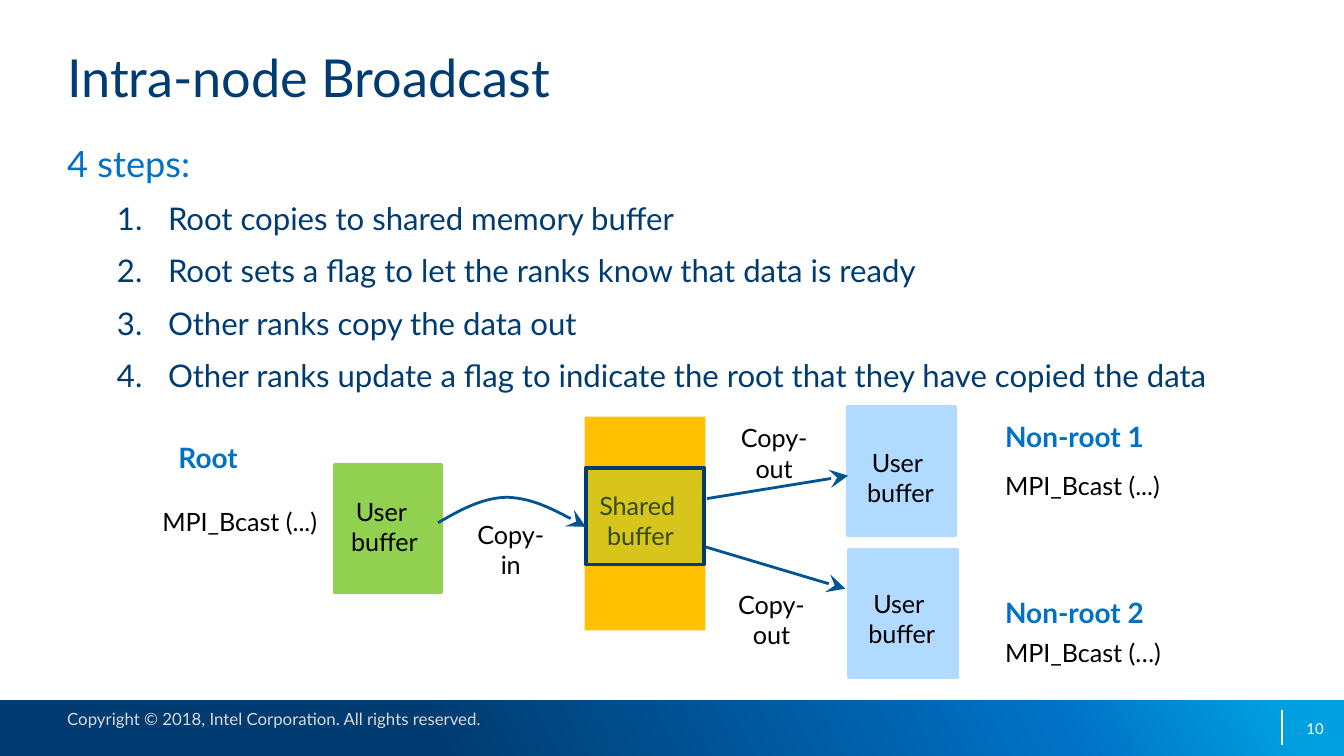
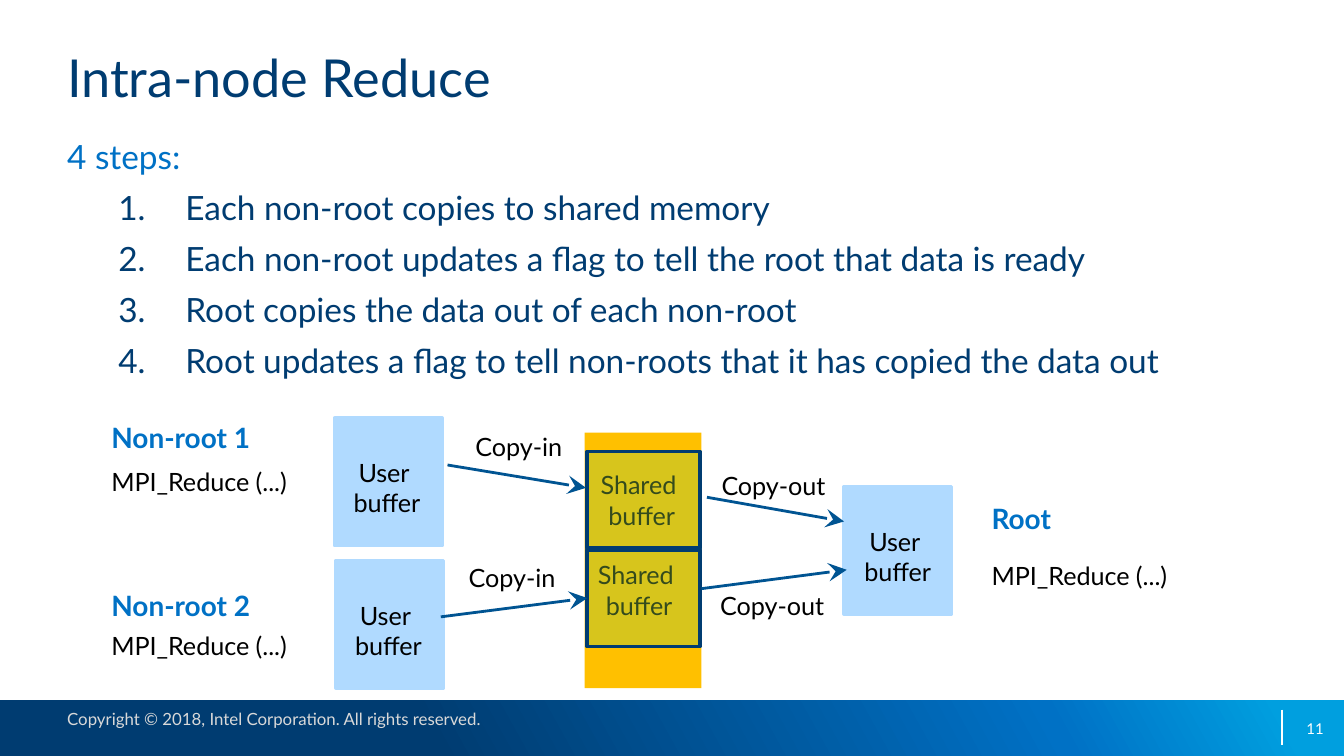
import copy
from dataclasses import dataclass
from typing import Optional

import lxml.etree
import pptx
import pptx.dml.color
import pptx.enum.shapes
import pptx.enum.text
import pptx.oxml.ns
import pptx.util

Inches = pptx.util.Inches
Pt = pptx.util.Pt
qn = pptx.oxml.ns.qn
Align = pptx.enum.text.PP_ALIGN
Anchor = pptx.enum.text.MSO_ANCHOR
Fit = pptx.enum.text.MSO_AUTO_SIZE
RECT = pptx.enum.shapes.MSO_SHAPE.RECTANGLE
STRAIGHT = pptx.enum.shapes.MSO_CONNECTOR.STRAIGHT


@dataclass(frozen=True)
class Theme:
    font: str = "Lato"
    navy: str = "003C71"
    blue: str = "0071C5"
    cyan: str = "009FDF"
    arrow: str = "005492"
    sky: str = "B0DAFF"
    green: str = "92D050"
    amber: str = "FFC000"
    black: str = "000000"
    white: str = "FFFFFF"
    grey: str = "D9D9D9"
    title: float = 28
    head: float = 15
    label: float = 13.5
    legal: float = 9
    number: float = 8
    wide: float = 2
    thin: float = 1.5
    hair: float = 0.75
    veil: int = 36


THEME = Theme()


@dataclass(frozen=True)
class Block:
    """A user buffer with its label placed at (lx, ly)."""
    x: float
    y: float
    lx: float
    ly: float
    w: float = 0.8
    h: float = 0.95
    lw: float = 0.9
    text: str = "User \nbuffer"
    color: str = THEME.sky
    edge: str = THEME.sky
    veil: Optional[int] = None


@dataclass(frozen=True)
class Note:
    text: str
    x: float
    y: float
    w: float
    h: float = 0.33
    bold: bool = False
    center: bool = False


@dataclass(frozen=True)
class Arrow:
    x1: float
    y1: float
    x2: float
    y2: float
    goal: Optional[int] = None  # index of the block whose left side it joins


@dataclass(frozen=True)
class Steps:
    items: tuple[str, ...]
    h: float
    head: float
    size: float
    left: float
    hang: float
    pitch: float


@dataclass(frozen=True)
class Page:
    number: int
    title: str
    steps: Steps
    bar: tuple[float, float, float, float]
    blocks: tuple[Block, ...]
    notes: tuple[Note, ...]
    arrows: tuple[Arrow, ...]
    curve: tuple[tuple[float, float], ...] = ()


def shared(x: float, y: float, w: float, lx: float, ly: float) -> Block:
    return Block(x, y, lx, ly, w, 0.72, 0.95, "Shared \nbuffer",
                 THEME.green, THEME.navy, THEME.veil)


def head(text: str, x: float, y: float) -> Note:
    return Note(text, x, y, 0.66 if text == "Root" else 1.28, 0.35, bold=True)


def copying(text: str, x: float, y: float, w: float, h: float = 0.33) -> Note:
    return Note(text, x, y, w, h, center=True)


PAGES = (
    Page(
        10, "Intra-node Broadcast",
        Steps(("Root copies to shared memory buffer",
               "Root sets a flag to let the ranks know that data is ready",
               "Other ranks copy the data out",
               "Other ranks update a flag to indicate the root that they have copied the data"),
              1.93, 19.4, 16.7, 0.75, 0.38, 1.0),
        (4.35, 3.1, 0.9, 1.59),
        (Block(2.49, 3.46, 2.42, 3.64, 0.79, lw=0.88, color=THEME.green, edge=THEME.green),
         Block(6.31, 3.03, 6.25, 3.27),
         Block(6.32, 4.09, 6.26, 4.32),
         shared(4.36, 3.48, 0.88, 4.29, 3.59)),
        (head("Root", 1.23, 3.23),
         Note("MPI_Bcast (...)", 1.11, 3.72, 1.36),
         head("Non-root 1", 7.38, 3.07),
         Note("MPI_Bcast (...)", 7.38, 3.45, 1.36),
         head("Non-root 2", 7.38, 4.38),
         Note("MPI_Bcast (…)", 7.38, 4.69, 1.36),
         copying("Copy-in", 3.39, 3.81, 0.82, 0.56),
         copying("Copy-out", 5.35, 3.09, 0.82, 0.56),
         copying("Copy-out", 5.33, 4.33, 0.82, 0.56)),
        (Arrow(5.26, 3.71, 6.31, 3.54), Arrow(5.25, 4.07, 6.29, 4.38)),
        ((3.26, 3.89), (3.43, 3.79), (3.6, 3.7), (3.78, 3.7),
         (3.96, 3.71), (4.16, 3.81), (4.36, 3.92)),
    ),
    Page(
        11, "Intra-node Reduce",
        Steps(("Each non-root copies to shared memory",
               "Each non-root updates a flag to tell the root that data is ready",
               "Root copies the data out of each non-root",
               "Root updates a flag to tell non-roots that it has copied the data out"),
              1.85, 17.9, 17.9, 0.88, 0.5, 0.9),
        (4.35, 3.22, 0.87, 1.9),
        (Block(2.49, 3.11, 2.43, 3.35),
         Block(2.5, 4.17, 2.44, 4.41),
         Block(6.28, 3.62, 6.23, 3.86),
         shared(4.37, 3.36, 0.84, 4.3, 3.44),
         shared(4.37, 4.09, 0.84, 4.28, 4.11)),
        (head("Non-root 1", 0.73, 3.08),
         Note("MPI_Reduce (...)", 0.73, 3.42, 1.53),
         head("Non-root 2", 0.73, 4.33),
         Note("MPI_Reduce (...)", 0.73, 4.64, 1.53),
         head("Root", 7.28, 3.68),
         Note("MPI_Reduce (...)", 7.28, 4.12, 1.53),
         copying("Copy-in", 3.42, 3.16, 0.88),
         copying("Copy-in", 3.37, 4.13, 0.88),
         copying("Copy-out", 5.2, 3.45, 1.11),
         copying("Copy-out", 5.19, 4.34, 1.11)),
        (Arrow(3.33, 3.46, 4.36, 3.63), Arrow(3.28, 4.59, 4.37, 4.45, goal=4),
         Arrow(5.26, 3.7, 6.28, 3.88), Arrow(5.22, 4.38, 6.3, 4.24)),
    ),
)


def rgb(color: str):
    return pptx.dml.color.RGBColor.from_string(color)


def style(para, size: float, color: str, bold: bool = False) -> None:
    for run in para.runs:
        run.font.name = THEME.font
        run.font.size = Pt(size)
        run.font.bold = bold
        run.font.color.rgb = rgb(color)


def place(shape, x: float, y: float, w: float, h: float) -> None:
    shape.left, shape.top = Inches(x), Inches(y)
    shape.width, shape.height = Inches(w), Inches(h)


def bare(frame) -> None:
    """Clear the insets and the fitting of a text frame."""
    frame.margin_left = frame.margin_right = frame.margin_top = frame.margin_bottom = 0
    frame.word_wrap = True
    frame.auto_size = Fit.NONE
    frame.vertical_anchor = Anchor.TOP


def write(slide, note: Note, size: float, color: str):
    box = slide.shapes.add_textbox(*map(Inches, (note.x, note.y, note.w, note.h)))
    frame = box.text_frame
    frame.text = note.text
    frame.word_wrap = note.center
    frame.auto_size = Fit.SHAPE_TO_FIT_TEXT
    frame.vertical_anchor = Anchor.MIDDLE if note.center else Anchor.TOP
    for para in frame.paragraphs:
        para.alignment = Align.CENTER if note.center else Align.LEFT
        style(para, size, color, note.bold)
    return box


def rect(slide, x: float, y: float, w: float, h: float):
    shape = slide.shapes.add_shape(RECT, *map(Inches, (x, y, w, h)))
    shape.shadow.inherit = False
    shape.line.fill.background()
    return shape


def paint(shape, color: str) -> None:
    shape.fill.solid()
    shape.fill.fore_color.rgb = rgb(color)


def stroke(line, color: str, width: float, tip: bool = False) -> None:
    line.color.rgb = rgb(color)
    line.width = Pt(width)
    if tip:
        lxml.etree.SubElement(line._get_or_add_ln(), qn("a:tailEnd"),
                              type="stealth", w="lg", len="lg")


def link(slide, x1: float, y1: float, x2: float, y2: float):
    line = slide.shapes.add_connector(STRAIGHT, *map(Inches, (x1, y1, x2, y2)))
    lxml.etree.SubElement(line._element.spPr, qn("a:effectLst"))
    return line


def footer(slide, number: int) -> None:
    band = rect(slide, 0, 5.21, 10, 0.42)
    band.fill.gradient()
    band.fill.gradient_angle = 29
    stops = band._element.spPr.find(".//" + qn("a:gsLst"))
    stops.append(copy.deepcopy(stops[0]))
    shades = ((0.32, THEME.navy), (0.78, THEME.blue), (0.95, THEME.cyan))
    for stop, (spot, color) in zip(band.fill.gradient_stops, shades):
        stop.position = spot
        stop.color.rgb = rgb(color)
    stroke(link(slide, 9.54, 5.28, 9.54, 5.54).line, THEME.white, THEME.hair)

    legal = Note("Copyright © 2018, Intel Corporation. All rights reserved.",
                 0.5, 5.27, 3.22, 0.15)
    bare(write(slide, legal, THEME.legal, THEME.grey).text_frame)
    frame = write(slide, Note(str(number), 9.54, 5.27, 0.31, 0.3),
                  THEME.number, THEME.white).text_frame
    bare(frame)
    frame.vertical_anchor = Anchor.MIDDLE
    frame.paragraphs[0].alignment = Align.RIGHT


def outline(slide, page: Page) -> None:
    """Fill the title and the numbered steps."""
    title, body = slide.placeholders
    place(title, 0.5, 0.34, 9, 0.95)
    title.text_frame.text = page.title
    bare(title.text_frame)
    title.text_frame.paragraphs[0].alignment = Align.LEFT
    style(title.text_frame.paragraphs[0], THEME.title, THEME.navy)

    steps = page.steps
    place(body, 0.5, 1.05, 9, steps.h)
    body.text_frame.text = "\n".join(("4 steps:", *steps.items))
    bare(body.text_frame)
    for i, para in enumerate(body.text_frame.paragraphs):
        props = para._p.get_or_add_pPr()
        props.set("marL", str(Inches(steps.left if i else 0)))
        props.set("indent", str(Inches(-steps.hang if i else 0)))
        if i:
            para.level = 1
            lxml.etree.SubElement(props, qn("a:buFont"), typeface="+mj-lt")
            lxml.etree.SubElement(props, qn("a:buAutoNum"), type="arabicPeriod")
        else:
            lxml.etree.SubElement(props, qn("a:buNone"))
        para.alignment = Align.LEFT
        para.line_spacing = steps.pitch
        para.space_before = Pt(8 if i else 0)
        style(para, steps.size if i else steps.head, THEME.navy if i else THEME.blue)


def buffer(slide, block: Block):
    """Draw a buffer; a veiled one lies over its label."""
    label = Note(block.text, block.lx, block.ly, block.lw, 0.56, center=True)
    if block.veil:
        write(slide, label, THEME.label, THEME.black)
    shape = rect(slide, block.x, block.y, block.w, block.h)
    paint(shape, block.color)
    stroke(shape.line, block.edge, THEME.wide)
    if block.veil:
        fill = shape._element.spPr.find(qn("a:solidFill"))
        lxml.etree.SubElement(fill[0], qn("a:alpha"), val=str(block.veil * 1000))
    else:
        write(slide, label, THEME.label, THEME.black)
    return shape


def bend(slide, points: tuple[tuple[float, float], ...]) -> None:
    """Draw an arrow of cubic curves, three points to each after the start."""
    spots = [(Inches(x), Inches(y)) for x, y in points]
    build = slide.shapes.build_freeform(*spots[0])
    build.add_line_segments(spots[1:], close=False)
    shape = build.convert_to_shape()
    shape.shadow.inherit = False
    shape.fill.background()
    stroke(shape.line, THEME.arrow, THEME.thin, tip=True)
    track = shape._element.spPr.find(".//" + qn("a:path"))
    parts = track.findall(qn("a:lnTo"))
    for i in range(0, len(parts), 3):
        curve = lxml.etree.SubElement(track, qn("a:cubicBezTo"))
        for part in parts[i:i + 3]:
            curve.append(part[0])
            track.remove(part)


def draw(deck, page: Page) -> None:
    slide = deck.slides.add_slide(deck.slide_layouts[1])
    footer(slide, page.number)
    outline(slide, page)
    paint(rect(slide, *page.bar), THEME.amber)
    shapes = [buffer(slide, block) for block in page.blocks]
    for note in page.notes:
        size, color = (THEME.head, THEME.blue) if note.bold else (THEME.label, THEME.black)
        write(slide, note, size, color)
    for arrow in page.arrows:
        line = link(slide, arrow.x1, arrow.y1, arrow.x2, arrow.y2)
        if arrow.goal is not None:
            line.end_connect(shapes[arrow.goal], 1)
        stroke(line.line, THEME.arrow, THEME.thin, tip=True)
    if page.curve:
        bend(slide, page.curve)


def main() -> None:
    deck = pptx.Presentation()
    deck.slide_width = Inches(10)
    deck.slide_height = Inches(10) * 9 // 16
    for page in PAGES:
        draw(deck, page)
    deck.save("out.pptx")


if __name__ == "__main__":
    main()
